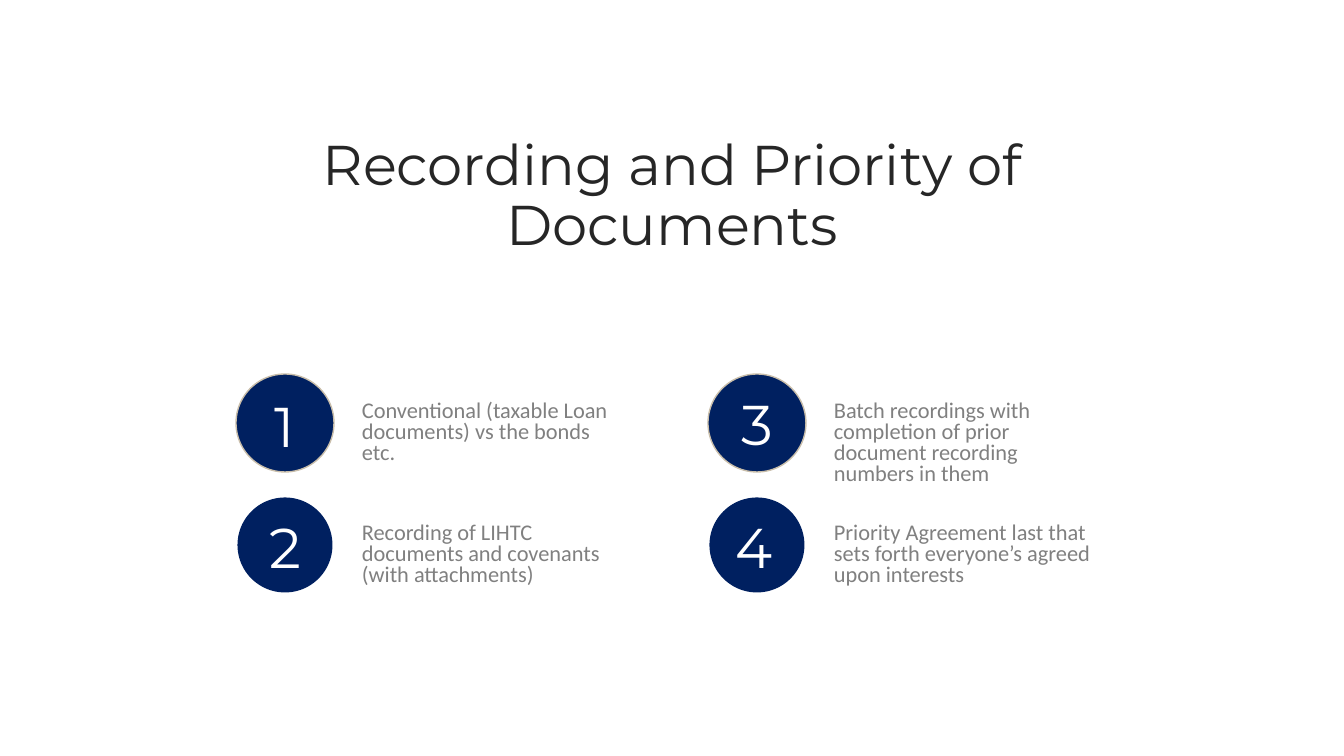
from dataclasses import dataclass

from pptx import Presentation
from pptx.dml.color import RGBColor
from pptx.enum.shapes import MSO_SHAPE
from pptx.enum.text import MSO_ANCHOR, PP_ALIGN
from pptx.util import Emu, Pt

OVAL = MSO_SHAPE.OVAL
TOP = MSO_ANCHOR.TOP
LEFT, CENTER = PP_ALIGN.LEFT, PP_ALIGN.CENTER

TITLE = "Recording and Priority of Documents"
# Each column lists its steps from top to bottom: number, text, number nudge (x, y) in px
COLUMNS = [
    [("1", "Conventional (taxable Loan documents) vs the bonds etc.", (0, 1)),
     ("2", "Recording of LIHTC documents and covenants (with attachments)", (0, 0))],
    [("3", "Batch recordings with completion of prior document recording numbers in them", (0, -1)),
     ("4", "Priority Agreement last that sets forth everyone’s agreed upon interests", (-3, 0))],
]


@dataclass(frozen=True)
class Theme:
    title: str = "262626"
    body: str = "808080"
    circle: str = "002060"
    ring: str = "C9BEAA"
    number: str = "FFFFFF"
    heading_font: str = "Montserrat"
    body_font: str = "Calibri"
    heading_size: int = 40
    body_size: int = 16
    heading_spacing: float = 0.9
    body_leading: int = 15


THEME = Theme()
SLIDE_W, SLIDE_H = 1344, 756
TITLE_BOX = (307, 132, 730, 216)
FIRST_CENTER_X, COLUMN_PITCH = 285, 472
# Circle centre, circle diameter, ringed or not, top of the text box
ROWS = [(423, 98, True, 397), (545, 95, False, 519)]
TEXT_DX, TEXT_W, TEXT_H = 67, 283, 74
NUMBER_W, NUMBER_H, NUMBER_DY = 74, 60, -30


def px(n):
    return Emu(round(n * 9144000 / 1008))


def rgb(value):
    return RGBColor.from_string(value)


def add_text(s, box, text, font, size, color, align, spacing):
    sp = s.shapes.add_textbox(*map(px, box))
    tf = sp.text_frame
    tf.word_wrap = True
    tf.vertical_anchor = TOP
    p = tf.paragraphs[0]
    p.alignment = align
    p.line_spacing = spacing
    r = p.add_run()
    r.text = text
    r.font.name = font
    r.font.size = Pt(size)
    r.font.color.rgb = rgb(color)


def add_heading(s, box, text, color):
    add_text(s, box, text, THEME.heading_font, THEME.heading_size, color,
             CENTER, THEME.heading_spacing)


def add_circle(s, cx, cy, diameter, ringed):
    corner = (cx - diameter / 2, cy - diameter / 2)
    sp = s.shapes.add_shape(OVAL, *map(px, (*corner, diameter, diameter)))
    sp.shadow.inherit = False
    sp.fill.solid()
    sp.fill.fore_color.rgb = rgb(THEME.circle)
    if ringed:
        sp.line.color.rgb = rgb(THEME.ring)
        sp.line.width = Pt(1)
    else:
        sp.line.fill.background()


def add_step(s, cx, row, step):
    cy, diameter, ringed, text_top = row
    number, text, (dx, dy) = step
    add_circle(s, cx, cy, diameter, ringed)
    add_text(s, (cx + TEXT_DX, text_top, TEXT_W, TEXT_H), text, THEME.body_font,
             THEME.body_size, THEME.body, LEFT, Pt(THEME.body_leading))
    add_heading(s, (cx - NUMBER_W / 2 + dx, cy + NUMBER_DY + dy, NUMBER_W, NUMBER_H),
                number, THEME.number)


def main():
    prs = Presentation()
    prs.slide_width, prs.slide_height = px(SLIDE_W), px(SLIDE_H)
    s = prs.slides.add_slide(prs.slide_layouts[6])
    add_heading(s, TITLE_BOX, TITLE, THEME.title)
    for i, steps in enumerate(COLUMNS):
        for row, step in zip(ROWS, steps):
            add_step(s, FIRST_CENTER_X + i * COLUMN_PITCH, row, step)
    prs.save("out.pptx")


if __name__ == "__main__":
    main()
